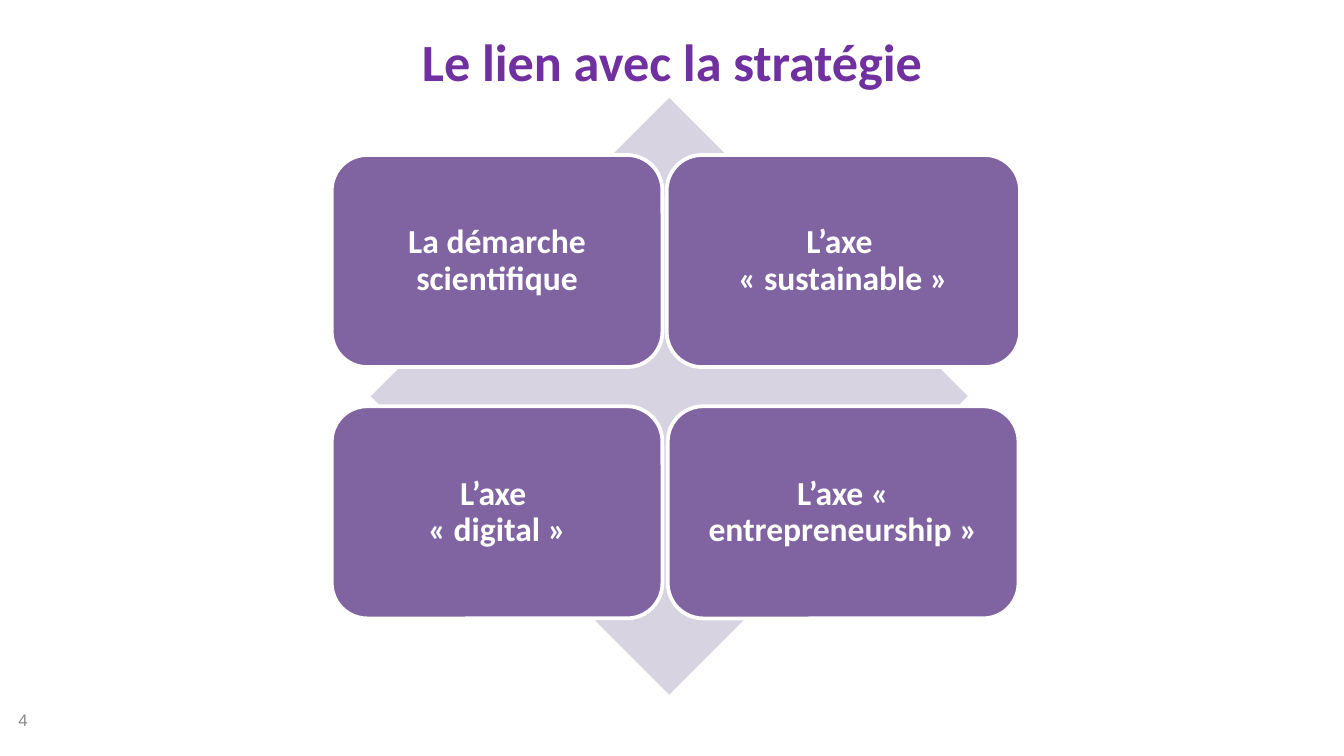
from pptx import Presentation
from pptx import util as u
from pptx.dml.color import RGBColor
from pptx.enum import shapes, text

COLORS = {"title": "7030A0", "box": "8064A2", "diamond": "D8D3E0",
          "white": "FFFFFF", "number": "898989"}


def rgb(name):
    return RGBColor.from_string(COLORS[name])


def write(tf, content, size, color, font="Calibri", bold=True,
          align=text.PP_ALIGN.CENTER, spacing=1.0):
    """Write one paragraph; a newline in the content is a line break."""
    tf.word_wrap = True
    tf.vertical_anchor = text.MSO_ANCHOR.MIDDLE
    p = tf.paragraphs[0]
    p.alignment, p.line_spacing = align, spacing
    for i, line in enumerate(content.split("\n")):
        if i:
            p.add_line_break()
        r = p.add_run()
        r.text = line
        r.font.name, r.font.size, r.font.bold = font, u.Pt(size), bold
        r.font.color.rgb = rgb(color)


class Deck:
    def __init__(self, s):
        self.s = s

    def label(self, content, at, **fmt):
        sp = self.s.shapes.add_textbox(*map(u.Cm, at))
        write(sp.text_frame, content, **fmt)

    def shape(self, kind, at, fill, line=None):
        sp = self.s.shapes.add_shape(kind, *map(u.Cm, at))
        sp.shadow.inherit = False
        sp.fill.solid()
        sp.fill.fore_color.rgb = rgb(fill)
        if line:
            sp.line.color.rgb = rgb(line)
            sp.line.width = u.Pt(2)
        else:
            sp.line.fill.background()
        return sp

    def box(self, content, at):
        sp = self.shape(shapes.MSO_SHAPE.FLOWCHART_ALTERNATE_PROCESS, at,
                        "box", "white")
        tf = sp.text_frame
        tf.margin_left = tf.margin_right = u.Cm(0.18)
        tf.margin_top = tf.margin_bottom = u.Cm(0.18)
        write(tf, content, 18, "white", spacing=0.9)


def main():
    prs = Presentation()
    prs.slide_width, prs.slide_height = u.Cm(25.4), u.Cm(14.29)
    deck = Deck(prs.slides.add_slide(prs.slide_layouts[6]))

    # Page number and title
    deck.label("4", (0.1, 13.23, 5.92, 0.76), size=9, color="number",
               font="Arial", bold=False, align=text.PP_ALIGN.LEFT)
    deck.label("Le lien avec la stratégie", (1.27, 0.36, 22.86, 1.57),
               size=28, color="title")

    # Diamond behind the four strategy boxes
    deck.shape(shapes.MSO_SHAPE.DIAMOND, (7.01, 1.85, 11.28, 11.28), "diamond")

    # Strategy boxes: text, left and width for each row
    rows = [
        [("La démarche scientifique", 6.27, 6.25),
         ("L’axe \n« sustainable »", 12.6, 6.68)],
        [("L’axe \n« digital »", 6.27, 6.25),
         ("L’axe « entrepreneurship »", 12.62, 6.63)],
    ]
    top, height, pitch = 2.93, 4.01, 4.75
    for i, row in enumerate(rows):
        for content, left, width in row:
            deck.box(content, (left, top + i * pitch, width, height))

    prs.save("out.pptx")


if __name__ == "__main__":
    main()
